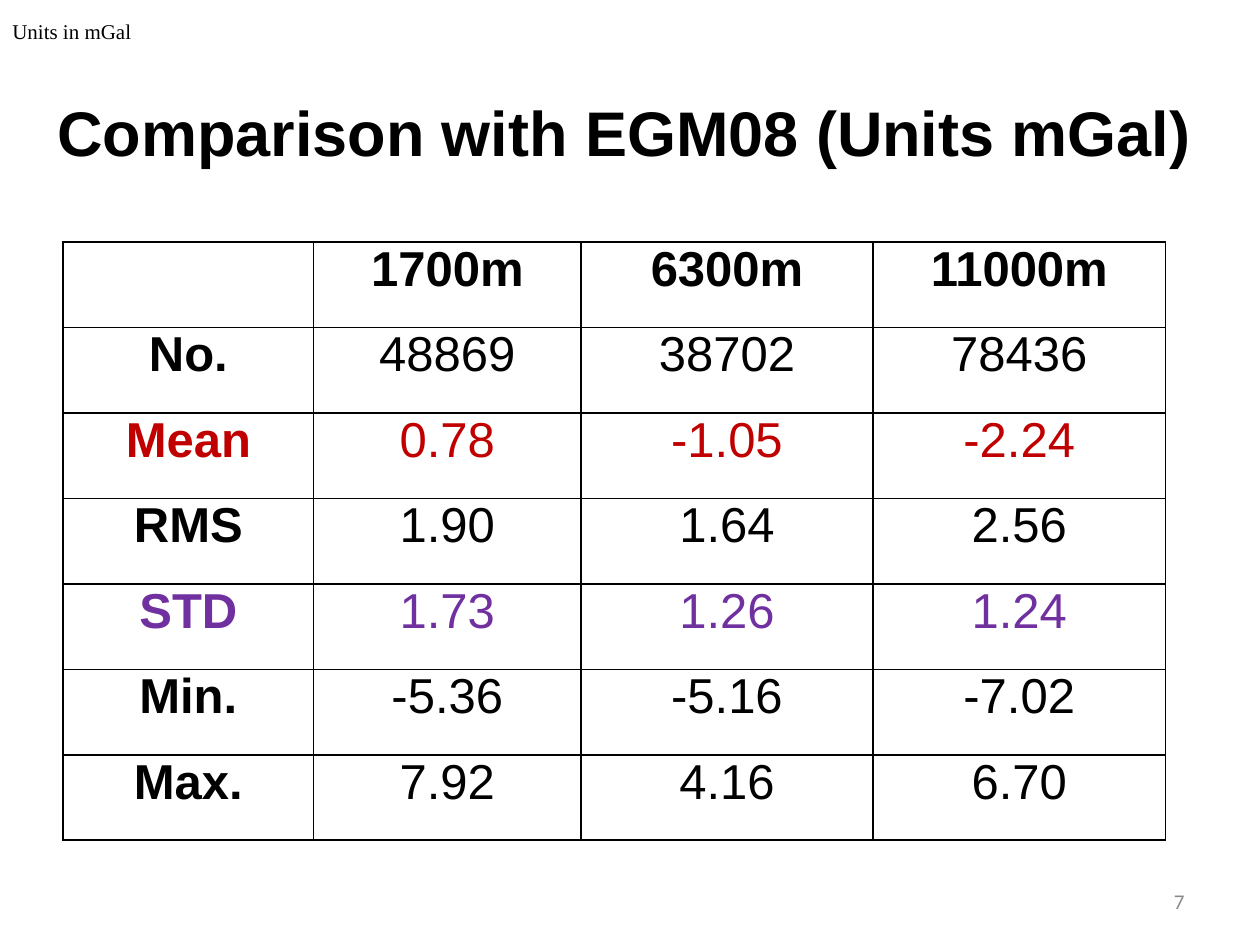
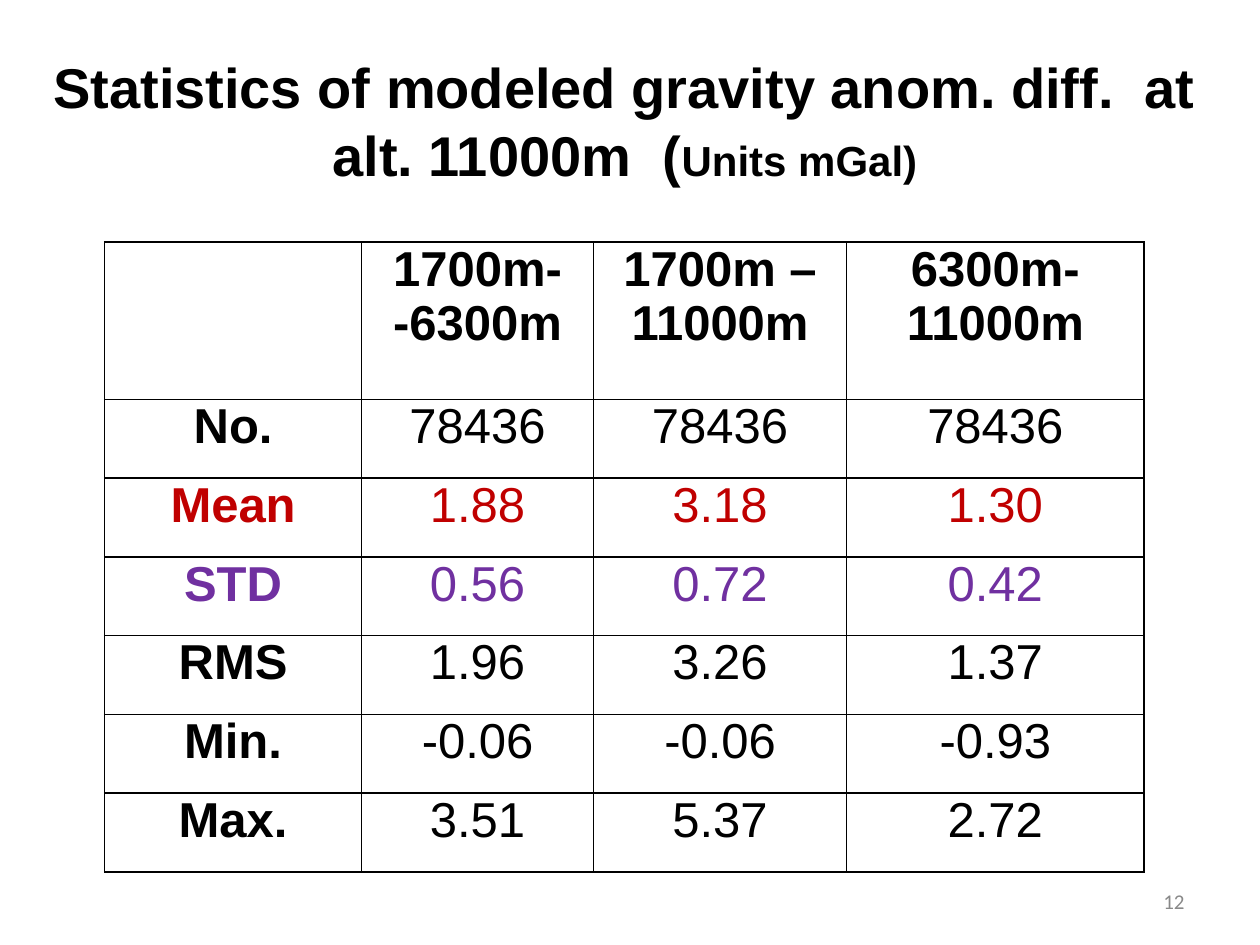
"""Build two slides of gravity statistics tables."""
from dataclasses import dataclass

from lxml import etree
from pptx import Presentation
from pptx import util as u
from pptx.dml.color import RGBColor
from pptx.enum import text as t
from pptx.oxml import ns


@dataclass(frozen=True)
class Theme:
    """Hold colours, fonts and type sizes."""
    ink: str = "000000"
    red: str = "C00000"
    violet: str = "7030A0"
    grey: str = "898989"
    sans: str = "Arial"
    serif: str = "Times New Roman"
    foot: str = "Calibri"
    head: int = 36
    long: int = 32
    cell: int = 28
    unit: int = 24
    small: int = 12
    rule: int = 1


THEME = Theme()
TINTS = {"Mean": THEME.red, "STD": THEME.violet}
ALIGN = {"l": t.PP_ALIGN.LEFT, "c": t.PP_ALIGN.CENTER, "r": t.PP_ALIGN.RIGHT}


def put(frame, words, size, font=THEME.sans, color=THEME.ink, bold=False,
        align="c", tail="", tail_size=None):
    """Write lines of text, with an optional last run in another size."""
    lines = words.split("\n")
    for i, line in enumerate(lines):
        para = frame.paragraphs[0] if i == 0 else frame.add_paragraph()
        para.alignment = ALIGN[align]
        runs = [(line, size)]
        if tail and i == len(lines) - 1:
            runs.append((tail, tail_size))
        for part, points in runs:
            run = para.add_run()
            run.text = part
            run.font.size = u.Pt(points)
            run.font.name = font
            run.font.bold = bold
            run.font.color.rgb = RGBColor.from_string(color)


class Deck:
    """Hold the style and the current slide."""

    def __init__(self, theme):
        """Start a deck in the given theme."""
        self.theme = theme
        self.prs = Presentation()
        self.prs.slide_width = u.Inches(10)
        self.prs.slide_height = u.Inches(7.5)
        self.slide = None

    def page(self, num):
        """Add a slide with its number."""
        self.slide = self.prs.slides.add_slide(self.prs.slide_layouts[5])
        self.label(str(num), (7.17, 6.95, 2.33, 0.4), font=self.theme.foot,
                   color=self.theme.grey, align="r")

    def title(self, words, box, size, anchor=t.MSO_ANCHOR.MIDDLE, **fmt):
        """Place and fill the title."""
        shape = self.slide.shapes.title
        shape.left, shape.top, shape.width, shape.height = map(u.Inches, box)
        frame = shape.text_frame
        frame.word_wrap = True
        frame.auto_size = t.MSO_AUTO_SIZE.NONE
        frame.vertical_anchor = anchor
        put(frame, words, size, bold=True, **fmt)

    def label(self, words, box, **fmt):
        """Add a small line of text."""
        frame = self.slide.shapes.add_textbox(*map(u.Inches, box)).text_frame
        frame.word_wrap = True
        frame.vertical_anchor = t.MSO_ANCHOR.MIDDLE
        put(frame, words, self.theme.small, **fmt)

    def edge(self, cell):
        """Rule all four sides of a cell."""
        props = cell._tc.get_or_add_tcPr()
        for i, side in enumerate(("lnL", "lnR", "lnT", "lnB")):
            line = etree.Element(ns.qn(f"a:{side}"), w=str(u.Pt(self.theme.rule)))
            fill = etree.SubElement(line, ns.qn("a:solidFill"))
            etree.SubElement(fill, ns.qn("a:srgbClr"), val=self.theme.ink)
            props.insert(i, line)

    def table(self, rows, box, cols):
        """Add a table whose rows grow with their header lines."""
        grid = self.slide.shapes.add_table(
            len(rows), len(cols), *map(u.Inches, box)).table
        grid.first_row = grid.horz_banding = False
        for col, width in zip(grid.columns, cols):
            col.width = u.Inches(width)
        spans = [max(word.count("\n") + 1 for word in row) for row in rows]
        unit = box[3] / sum(spans)
        for r, row in enumerate(rows):
            grid.rows[r].height = u.Inches(unit * spans[r])
            for c, word in enumerate(row):
                cell = grid.cell(r, c)
                cell.margin_left = cell.margin_right = u.Inches(0.07)
                cell.margin_top = cell.margin_bottom = 0
                cell.fill.background()
                self.edge(cell)
                if word:
                    put(cell.text_frame, word, self.theme.cell,
                        color=TINTS.get(row[0], self.theme.ink),
                        bold=r == 0 or c == 0)


def main():
    """Build and save the deck."""
    deck = Deck(THEME)

    deck.page(7)
    deck.title("Comparison with EGM08 (Units mGal)",
               (0.33, 0.58, 9.25, 0.92), THEME.head)
    deck.table([
        ("", "1700m", "6300m", "11000m"),
        ("No.", "48869", "38702", "78436"),
        ("Mean", "0.78", "-1.05", "-2.24"),
        ("RMS", "1.90", "1.64", "2.56"),
        ("STD", "1.73", "1.26", "1.24"),
        ("Min.", "-5.36", "-5.16", "-7.02"),
        ("Max.", "7.92", "4.16", "6.70"),
    ], (0.5, 1.92, 8.75, 4.75), (1.99, 2.12, 2.32, 2.32))
    deck.label("Units in mGal", (0, 0, 10, 0.5), font=THEME.serif, align="l")

    deck.page(12)
    deck.title("Statistics of modeled gravity anom. diff.  at alt. 11000m  (",
               (0.25, 0.37, 9.42, 1.48), THEME.long, t.MSO_ANCHOR.TOP,
               tail="Units mGal)", tail_size=THEME.unit)
    deck.table([
        ("", "1700m-\n-6300m", "1700m –\n11000m", "6300m-\n11000m"),
        ("No.", "78436", "78436", "78436"),
        ("Mean", "1.88", "3.18", "1.30"),
        ("STD", "0.56", "0.72", "0.42"),
        ("RMS", "1.96", "3.26", "1.37"),
        ("Min.", "-0.06", "-0.06", "-0.93"),
        ("Max.", "3.51", "5.37", "2.72"),
    ], (0.83, 1.92, 8.25, 5), (2.04, 1.84, 2.01, 2.36))

    deck.prs.save("out.pptx")


if __name__ == "__main__":
    main()
